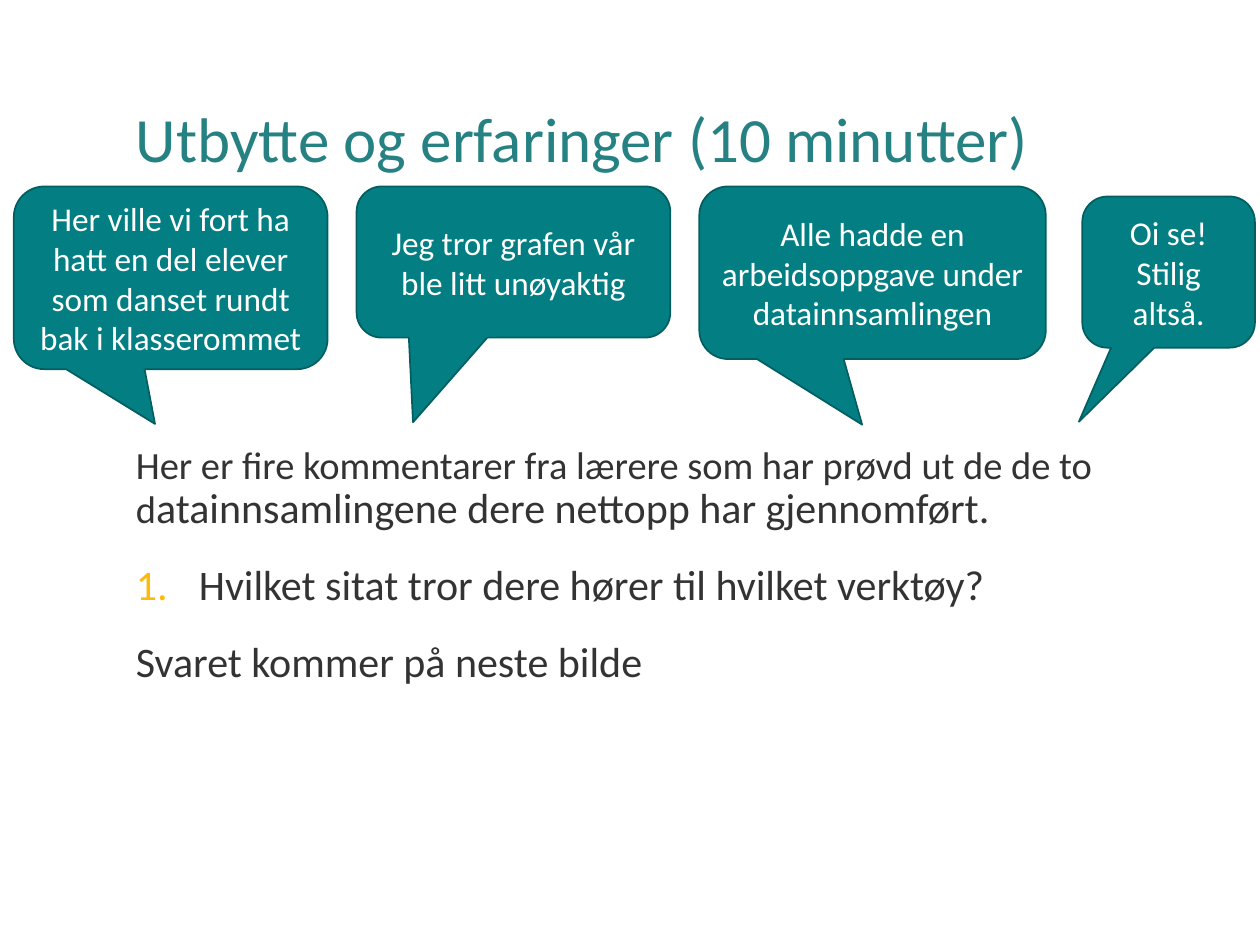
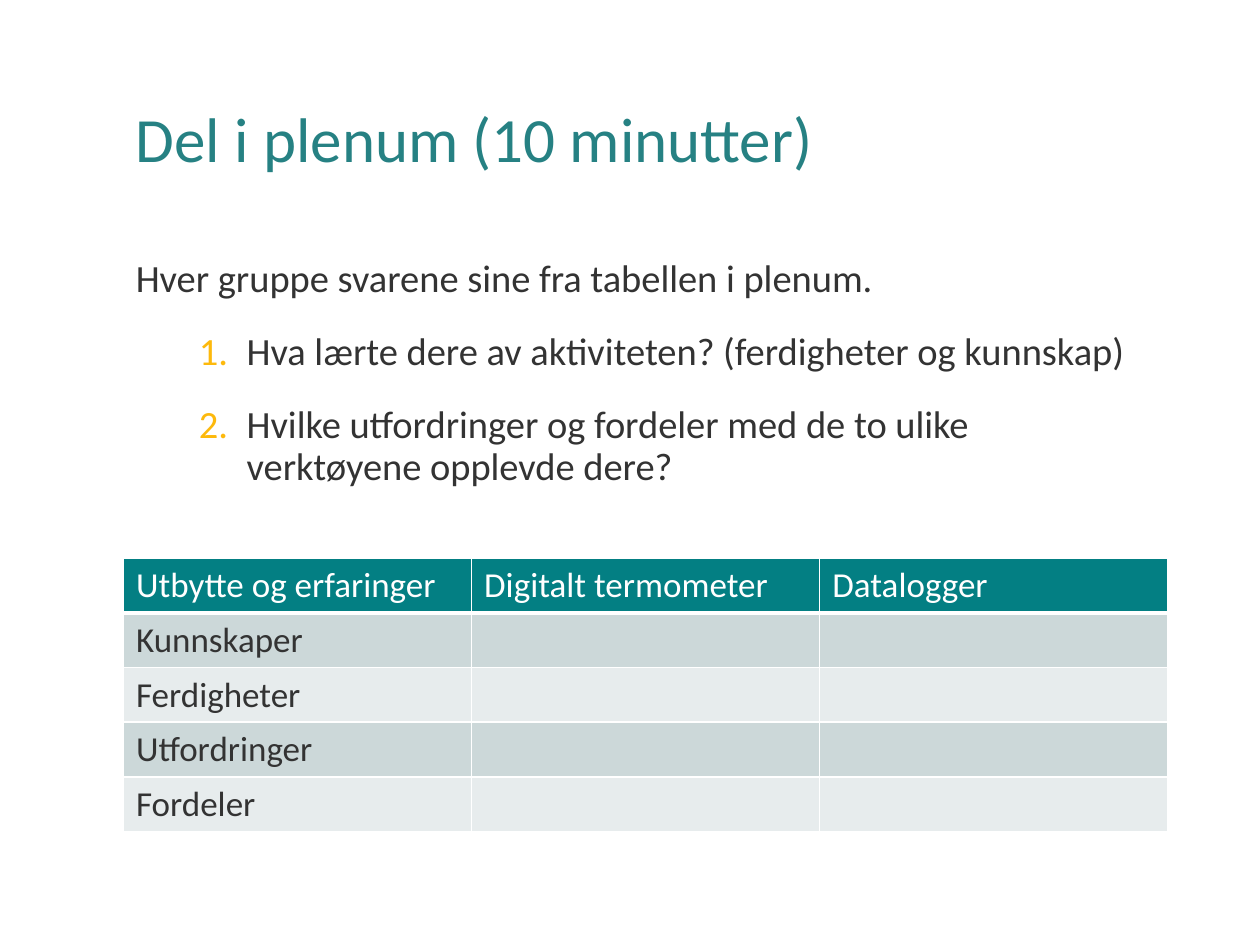
from lxml.etree import SubElement
from pptx import Presentation
from pptx.dml.color import RGBColor
from pptx.enum.shapes import MSO_SHAPE
from pptx.enum.text import MSO_ANCHOR, PP_ALIGN
from pptx.oxml.ns import qn
from pptx.util import Inches, Pt

# Shared look
FONT = "Calibri"
TEAL, EDGE, TITLE = "037F83", "025E61", "268183"
INK, WHITE, NUMBER = "333333", "FFFFFF", "FDB90C"
BANDS = ("CCD8D9", "E7ECED")
LEFT, WIDTH = 0.98, 8.29

# Slide 1: a body paragraph is (runs as (text, size), indent, hanging); no hanging, no number
EXPERIENCE = "Utbytte og erfaringer (10 minutter)"
EXPERIENCE_BODY = [
    ([("Her er fire kommentarer fra lærere som har prøvd ut de de to d", 22),
      ("atainnsamlingene dere nettopp har gjennomført.", 24)], 0, 0),
    ([("Hvilket sitat tror dere hører til hvilket verktøy?", 24)], 0.5, 0.5),
    ([("Svaret kommer på neste bilde", 24)], 0, 0),
]
# Quotes: left, top, width, height, tail tip as shares of the bubble from its centre
QUOTES = [
    (["Oi se!", "Stilig altså."], (8.59, 1.56, 1.37, 1.2), (-0.52, 0.99)),
    (["Her ville vi fort ha hatt en del elever som danset rundt bak i klasserommet"],
     (0.11, 1.48, 2.49, 1.45), (-0.05, 0.8)),
    (["Alle hadde en arbeidsoppgave under datainnsamlingen"],
     (5.55, 1.48, 2.75, 1.37), (-0.03, 0.88)),
    (["Jeg tror grafen vår ble litt unøyaktig"],
     (2.83, 1.48, 2.49, 1.2), (-0.32, 1.06)),
]

# Slide 2
PLENARY = "Del i plenum (10 minutter)"
PLENARY_BODY = [
    ([("Hver gruppe svarene sine fra tabellen i plenum.", 22)], 0, 0),
    ([("Hva lærte dere av aktiviteten? (ferdigheter og kunnskap)", 22)], 0.88, 0.38),
    ([("Hvilke utfordringer og fordeler med de to ulike verktøyene opplevde dere?", 22)],
     0.88, 0.38),
]
HEADERS = ["Utbytte og erfaringer", "Digitalt termometer", "Datalogger"]
TOPICS = ["Kunnskaper", "Ferdigheter", "Utfordringer", "Fordeler"]


def rgb(value):
    return RGBColor.from_string(value)


def write(p, text, size=20, color=INK, align=None, line=None):
    """Add one formatted run to a paragraph."""
    if align is not None:
        p.alignment = align
    if line:
        p.line_spacing = line
    r = p.add_run()
    r.text = text
    f = r.font
    f.name, f.size, f.bold = FONT, Pt(size), False
    f.color.rgb = rgb(color)


def paragraphs(tf, items):
    """Pair each item with a paragraph of the frame."""
    for i, item in enumerate(items):
        yield (tf.add_paragraph() if i else tf.paragraphs[0]), item


def text_box(s, box, anchor=MSO_ANCHOR.TOP):
    tf = s.shapes.add_textbox(*map(Inches, box)).text_frame
    tf.word_wrap = True
    tf.vertical_anchor = anchor
    return tf


def number(p, indent, hanging):
    pPr = p._p.get_or_add_pPr()
    pPr.set("marL", str(Inches(indent)))
    pPr.set("indent", str(-Inches(hanging)))
    SubElement(SubElement(pPr, qn("a:buClr")), qn("a:srgbClr"), val=NUMBER)
    SubElement(pPr, qn("a:buAutoNum"), type="arabicPeriod")


def add_slide(prs, title, body, body_box):
    s = prs.slides.add_slide(prs.slide_layouts[6])
    tf = text_box(s, (LEFT, 0.4, WIDTH, 1.45), MSO_ANCHOR.MIDDLE)
    write(tf.paragraphs[0], title, size=36, color=TITLE, line=0.9)
    for i, (p, (runs, indent, hanging)) in enumerate(paragraphs(text_box(s, body_box), body)):
        if hanging:
            number(p, indent, hanging)
        if i:
            p.space_before = Pt(18)
        for text, size in runs:
            write(p, text, size=size, line=0.9)
    return s


def add_quote(s, lines, box, tip):
    sp = s.shapes.add_shape(MSO_SHAPE.ROUNDED_RECTANGULAR_CALLOUT, *map(Inches, box))
    sp.shadow.inherit = False
    sp.adjustments[0], sp.adjustments[1] = tip
    sp.fill.solid()
    sp.fill.fore_color.rgb = rgb(TEAL)
    sp.line.color.rgb = rgb(EDGE)
    sp.line.width = Pt(1)
    tf = sp.text_frame
    tf.word_wrap = True
    tf.vertical_anchor = MSO_ANCHOR.MIDDLE
    for p, text in paragraphs(tf, lines):
        write(p, text, size=19, color=WHITE, align=PP_ALIGN.CENTER)


def style_cell(cell, fill, widths):
    """Set white borders (left, right, top, bottom), then the fill."""
    tcPr = cell._tc.get_or_add_tcPr()
    for side, width in zip("LRTB", widths):
        ln = SubElement(tcPr, qn(f"a:ln{side}"), w=str(Pt(width)))
        SubElement(SubElement(ln, qn("a:solidFill")), qn("a:srgbClr"), val=WHITE)
    cell.fill.solid()
    cell.fill.fore_color.rgb = rgb(fill)


def add_topic_table(s):
    rows = [HEADERS] + [[topic, "", ""] for topic in TOPICS]
    table = s.shapes.add_table(len(rows), len(HEADERS), Inches(LEFT), Inches(4.43),
                               Inches(WIDTH), Inches(2.17)).table
    for i, row in enumerate(rows):
        fill = BANDS[(i - 1) % 2] if i else TEAL
        widths = (1, 1, 3 if i == 1 else 1, 1 if i else 3)
        for j, text in enumerate(row):
            cell = table.cell(i, j)
            style_cell(cell, fill, widths)
            if text:
                write(cell.text_frame.paragraphs[0], text, color=INK if i else WHITE)


def main():
    prs = Presentation()
    prs.slide_width, prs.slide_height = Inches(10), Inches(7.5)

    s = add_slide(prs, EXPERIENCE, EXPERIENCE_BODY, (LEFT, 3.49, WIDTH, 2.93))
    for quote in QUOTES:
        add_quote(s, *quote)

    s = add_slide(prs, PLENARY, PLENARY_BODY, (LEFT, 2.01, 8.17, 4.41))
    add_topic_table(s)

    prs.save("out.pptx")


if __name__ == "__main__":
    main()
